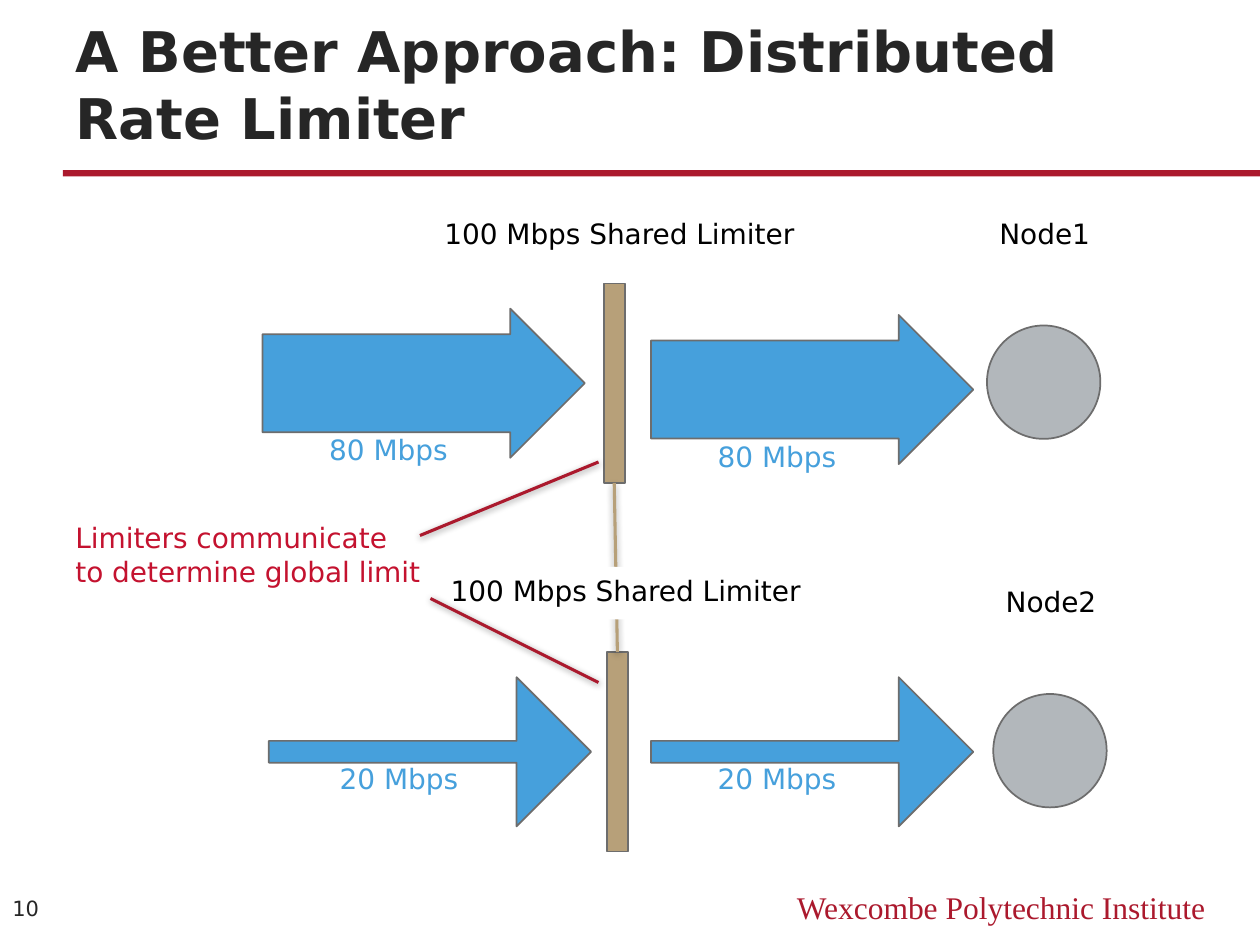
from lxml.etree import SubElement
from pptx import Presentation
from pptx.dml.color import RGBColor
from pptx.enum.shapes import MSO_CONNECTOR, MSO_SHAPE
from pptx.enum.text import MSO_ANCHOR, PP_ALIGN
from pptx.oxml.ns import qn
from pptx.util import Inches, Pt

COLS, ROWS = 120, 90
WIDE, HIGH = Inches(10), Inches(7.5)
RED, BLUE, TAN, GRAY = "AB192D", "46A0DC", "B7A079", "B2B7BB"
DARK, BLACK, WHITE, EDGE = "262626", "000000", "FFFFFF", "6D6D6D"
SANS = "DejaVu Sans"


def grid(*nums):
    """Turn column, row pairs of the slide grid into lengths."""
    return [round(n * (HIGH / ROWS if i % 2 else WIDE / COLS))
            for i, n in enumerate(nums)]


def color(code):
    return RGBColor.from_string(code)


def style(frame, size, code, font=SANS, align=PP_ALIGN.LEFT, bold=False):
    for para in frame.paragraphs:
        para.alignment = align
        for run in para.runs:
            run.font.size, run.font.name = Pt(size), font
            run.font.bold = bold
            run.font.color.rgb = color(code)


def text(slide, box, words, size=16, code=BLACK, font=SANS,
         align=PP_ALIGN.CENTER, anchor=MSO_ANCHOR.TOP, back=None):
    shape = slide.shapes.add_textbox(*grid(*box))
    frame = shape.text_frame
    frame.text = words
    frame.word_wrap = False
    frame.vertical_anchor = anchor
    style(frame, size, code, font, align)
    if back:
        shape.fill.solid()
        shape.fill.fore_color.rgb = color(back)


def solid(slide, kind, box, code, edge=EDGE):
    shape = slide.shapes.add_shape(kind, *grid(*box))
    shape.shadow.inherit = False
    shape.fill.solid()
    shape.fill.fore_color.rgb = color(code)
    if edge:
        shape.line.color.rgb = color(edge)
        shape.line.width = Pt(1)
    else:
        shape.line.fill.background()
    return shape


def line(slide, ends, code):
    """Draw a straight line with a soft shadow."""
    link = slide.shapes.add_connector(MSO_CONNECTOR.STRAIGHT, *grid(*ends))
    link.line.color.rgb = color(code)
    link.line.width = Pt(1.75)
    effect = SubElement(link._element.spPr, qn("a:effectLst"))
    shade = SubElement(effect, qn("a:outerShdw"), blurRad=str(Pt(4)),
                       dist=str(Pt(1)), dir=str(88 * 60000), rotWithShape="0")
    tint = SubElement(shade, qn("a:srgbClr"), val=BLACK)
    SubElement(tint, qn("a:alpha"), val="40000")
    return link


def frame_page(slide):
    """Place the title, rule, page number and footer."""
    solid(slide, MSO_SHAPE.RECTANGLE, (6, 16.2, 114, 0.6), RED, None)
    title = slide.shapes.title
    title.left, title.top, title.width, title.height = grid(6, 4.5, 108, 10.5)
    title.text_frame.text = "A Better Approach: Distributed Rate Limiter"
    title.text_frame.vertical_anchor = MSO_ANCHOR.BOTTOM
    style(title.text_frame, 32, DARK, bold=True)
    text(slide, (0, 83.9, 6, 5.2), "10", 12, DARK,
         align=PP_ALIGN.LEFT, anchor=MSO_ANCHOR.MIDDLE)
    text(slide, (72, 84, 44, 4.8), "Wexcombe Polytechnic Institute", 18, RED,
         "Times New Roman", PP_ALIGN.RIGHT)


def flow(slide, left, top, rate, share, inset, drop):
    """Draw an arrow whose shaft takes the given share, and its rate below."""
    arrow = solid(slide, MSO_SHAPE.RIGHT_ARROW, (left, top, 30.7, 14.2), BLUE)
    arrow.adjustments[0], arrow.adjustments[1] = share, 0.5
    text(slide, (left + inset, top + drop, 18, 4), rate, code=BLUE)


def lane(slide, left, top, bar, name, flows, rate, share, drop):
    """Draw one node with its limiter and flows; return the limiter."""
    solid(slide, MSO_SHAPE.OVAL, (left + 69, top + 4, 10.8, 10.8), GRAY)
    text(slide, (left + 68, top - 7, 13, 5), name)
    for start, shift, inset in flows:
        flow(slide, start, top + shift, rate, share, inset, drop)
    return solid(slide, MSO_SHAPE.RECTANGLE, (bar, top, 2, 19), TAN)


def note(slide, left, top):
    text(slide, (left, top, 36, 10),
         "Limiters communicate\nto determine global limit",
         code="C4122F", align=PP_ALIGN.LEFT)
    line(slide, (left + 34, top + 2, left + 51, top - 5), RED)
    line(slide, (left + 35, top + 8, left + 51, top + 16), RED)


def main():
    deck = Presentation()
    deck.slide_width, deck.slide_height = WIDE, HIGH
    slide = deck.slides.add_slide(deck.slide_layouts[5])
    frame_page(slide)
    upper = lane(slide, 25, 27, 57.5, "Node1",
                 [(25, 2.4, 3), (62, 3, 3)], "80 Mbps", 0.657, 11.25)
    lower = lane(slide, 25.6, 62.1, 57.8, "Node2",
                 [(25.6, 2.4, 3.4), (62, 2.4, 3)], "20 Mbps", 0.146, 7.4)
    link = line(slide, (58.5, 46, 58.8, 62.1), TAN)
    link.begin_connect(upper, 2)
    link.end_connect(lower, 0)
    for left, top, back in ((40, 20, None), (40.6, 54, WHITE)):
        text(slide, (left, top, 38, 5), "100 Mbps Shared Limiter", back=back)
    note(slide, 6, 49)
    deck.save("out.pptx")


if __name__ == "__main__":
    main()
